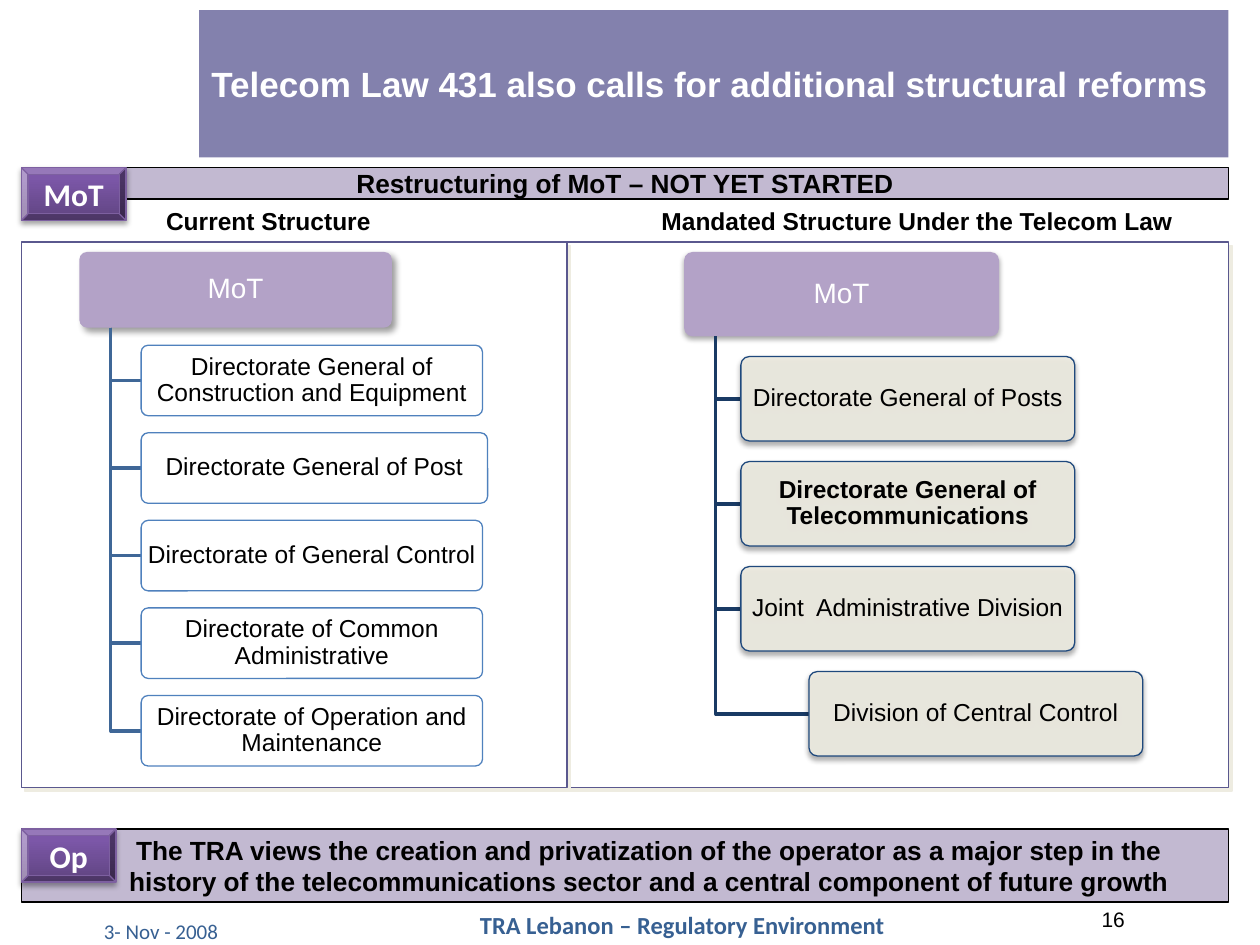
from dataclasses import dataclass
from typing import NamedTuple, Optional

import pptx
import pptx.dml.color
import pptx.enum.shapes
import pptx.enum.text
import pptx.oxml.ns
import pptx.util
from lxml import etree
from pptx.util import Inches

ALIGN = pptx.enum.text.PP_ALIGN
ANCHOR = pptx.enum.text.MSO_ANCHOR
PRESET = pptx.enum.shapes.MSO_SHAPE


class Box(NamedTuple):
    left: float
    top: float
    width: float
    height: float


class Shadow(NamedTuple):
    color: str
    alpha: int
    blur: float
    distance: float
    angle: int


class Margins(NamedTuple):
    left: float = 0.1
    top: float = 0.05
    right: float = 0.1
    bottom: float = 0.05


@dataclass(frozen=True)
class TextStyle:
    size: int
    color: str = "000000"
    bold: bool = False
    font: str = "Arial"
    align: ALIGN = ALIGN.CENTER
    anchor: ANCHOR = ANCHOR.MIDDLE
    margins: Margins = Margins()
    line_spacing: float = 1.0


@dataclass(frozen=True)
class ShapeStyle:
    fill: str
    line: Optional[str] = None
    alpha: int = 100
    shadow: Optional[Shadow] = None
    fill_end: Optional[str] = None
    corner: Optional[float] = None


class Theme:
    soft = Shadow("000000", 35, 3.1, 1.8, 90)
    node_margins = Margins(0.03, 0.02, 0.03, 0.02)

    title_bar = ShapeStyle("8381AD")
    banner = ShapeStyle("C2B9D1", "000000")
    panel = ShapeStyle("FFFFFF", "5A588E", shadow=Shadow("EEECE1", 100, 0, 2.8, 45))
    badge = ShapeStyle("5F4480", "7D60A0", shadow=soft, fill_end="7C57A8")
    current_root = ShapeStyle("B3A2C7", shadow=Shadow("000000", 40, 4, 3, 45), corner=0.1)
    mandated_root = ShapeStyle("B3A2C7", shadow=soft, corner=0.1)
    current_node = ShapeStyle("FFFFFF", "4F81BD", 90, corner=0.1)
    mandated_node = ShapeStyle("EEECE1", "1F497D", 90, soft, corner=0.1)

    title = TextStyle(20, "FFFFFF", True, align=ALIGN.LEFT)
    banner_text = TextStyle(15, bold=True)
    conclusion = TextStyle(15, bold=True, margins=Margins(left=0.48))
    heading = TextStyle(14, bold=True)
    mandated_heading = TextStyle(14, bold=True, align=ALIGN.LEFT, margins=Margins(left=0.75))
    badge_text = TextStyle(18, "FFFFFF", True, "Calibri")
    root_text = TextStyle(16, "FFFFFF", margins=node_margins, line_spacing=0.9)
    node_text = TextStyle(14, margins=node_margins, line_spacing=0.9)
    key_node_text = TextStyle(14, bold=True, margins=node_margins, line_spacing=0.9)
    page_number = TextStyle(12)
    date = TextStyle(12, "376092", font="Calibri", align=ALIGN.RIGHT, anchor=ANCHOR.TOP)
    footer = TextStyle(14, "376092", True, "Calibri", anchor=ANCHOR.TOP)


class Node(NamedTuple):
    label: str
    left: float
    width: float
    style: TextStyle = Theme.node_text


@dataclass(frozen=True)
class Chart:
    """One structure: a root, and nodes spread evenly from first_top to last_top."""
    root: Box
    root_style: ShapeStyle
    node_style: ShapeStyle
    trunk_color: str
    node_height: float
    first_top: float
    last_top: float
    nodes: tuple[Node, ...]


CHARTS = (
    Chart(Box(0.63, 2, 2.48, 0.6), Theme.current_root, Theme.current_node, "3F6797",
          0.56, 2.74, 5.52, (
              Node("Directorate General of Construction and Equipment", 1.12, 2.71),
              Node("Directorate General of Post", 1.12, 2.75),
              Node("Directorate of General Control", 1.12, 2.71),
              Node("Directorate of Common Administrative", 1.12, 2.71),
              Node("Directorate of Operation and Maintenance", 1.12, 2.71))),
    Chart(Box(5.43, 2, 2.5, 0.67), Theme.mandated_root, Theme.mandated_node, "193A64",
          0.67, 2.83, 5.33, (
              Node("Directorate General of Posts", 5.88, 2.65),
              Node("Directorate General of Telecommunications", 5.88, 2.65, Theme.key_node_text),
              Node("Joint  Administrative Division", 5.88, 2.65),
              Node("Division of Central Control", 6.42, 2.65))),
)


def rgb(color: str) -> pptx.dml.color.RGBColor:
    return pptx.dml.color.RGBColor.from_string(color)


def add_child(parent, tag: str, **attributes):
    names = {name: str(value) for name, value in attributes.items()}
    return etree.SubElement(parent, pptx.oxml.ns.qn(tag), names)


def write(shape, style: TextStyle, *lines: str) -> None:
    frame = shape.text_frame
    frame.word_wrap = True
    frame.vertical_anchor = style.anchor
    (frame.margin_left, frame.margin_top,
     frame.margin_right, frame.margin_bottom) = map(Inches, style.margins)
    for index, line in enumerate(lines):
        paragraph = frame.add_paragraph() if index else frame.paragraphs[0]
        paragraph.alignment = style.align
        paragraph.line_spacing = style.line_spacing
        run = paragraph.add_run()
        run.text = line
        run.font.name = style.font
        run.font.size = pptx.util.Pt(style.size)
        run.font.bold = style.bold
        run.font.color.rgb = rgb(style.color)


def add_label(slide, box: Box, style: TextStyle, text: str) -> None:
    write(slide.shapes.add_textbox(*map(Inches, box)), style, text)


def add_block(slide, preset: PRESET, box: Box, style: ShapeStyle):
    shape = slide.shapes.add_shape(preset, *map(Inches, box))
    if style.corner is not None:
        shape.adjustments[0] = style.corner
    if style.fill_end:
        shape.fill.gradient()
        shape.fill.gradient_angle = 90
        start, end = shape.fill.gradient_stops
        start.color.rgb, end.color.rgb = rgb(style.fill), rgb(style.fill_end)
        end.position = 0.8
    else:
        shape.fill.solid()
        shape.fill.fore_color.rgb = rgb(style.fill)
    properties = shape.element.spPr
    if style.alpha < 100:
        fill_color = properties.find(pptx.oxml.ns.qn("a:solidFill"))[0]
        add_child(fill_color, "a:alpha", val=style.alpha * 1000)
    if style.line:
        shape.line.color.rgb = rgb(style.line)
        shape.line.width = pptx.util.Pt(0.75)
    else:
        shape.line.fill.background()
    shape.shadow.inherit = False
    if style.shadow:
        shadow = style.shadow
        outer = add_child(properties.find(pptx.oxml.ns.qn("a:effectLst")), "a:outerShdw",
                          blurRad=pptx.util.Pt(shadow.blur), dist=pptx.util.Pt(shadow.distance),
                          dir=shadow.angle * 60000, algn="tl", rotWithShape=0)
        add_child(add_child(outer, "a:srgbClr", val=shadow.color),
                  "a:alpha", val=shadow.alpha * 1000)
    return shape


def add_branch(slide, x: float, top: float, end_x: float, end_y: float, color: str) -> None:
    """Draw an L-shaped line down from the root and across to a node."""
    builder = slide.shapes.build_freeform(Inches(x), Inches(top))
    builder.add_line_segments([(Inches(x), Inches(end_y)), (Inches(end_x), Inches(end_y))],
                              close=False)
    branch = builder.convert_to_shape()
    branch.fill.background()
    branch.line.color.rgb = rgb(color)
    branch.line.width = pptx.util.Pt(2)
    branch.shadow.inherit = False


def add_structure(slide, chart: Chart) -> None:
    root = chart.root
    write(add_block(slide, PRESET.ROUNDED_RECTANGLE, root, chart.root_style),
          Theme.root_text, "MoT")
    pitch = (chart.last_top - chart.first_top) / (len(chart.nodes) - 1)
    for index, node in enumerate(chart.nodes):
        top = chart.first_top + index * pitch
        add_branch(slide, root.left + root.width / 10, root.top + root.height,
                   node.left, top + chart.node_height / 2, chart.trunk_color)
        box = Box(node.left, top, node.width, chart.node_height)
        write(add_block(slide, PRESET.ROUNDED_RECTANGLE, box, chart.node_style),
              node.style, node.label)


def main() -> None:
    deck = pptx.Presentation()
    deck.slide_width, deck.slide_height = Inches(10), Inches(7.5)
    slide = deck.slides.add_slide(deck.slide_layouts[6])

    add_label(slide, Box(7.67, 7.17, 2.33, 0.25), Theme.page_number, "16")
    write(add_block(slide, PRESET.RECTANGLE, Box(1.58, 0.08, 8.17, 1.17), Theme.title_bar),
          Theme.title, "Telecom Law 431 also calls for additional structural reforms")
    for panel in (Box(4.5, 1.92, 5.25, 4.33), Box(0.17, 1.92, 4.33, 4.33)):
        add_block(slide, PRESET.RECTANGLE, panel, Theme.panel)
    for chart in CHARTS:
        add_structure(slide, chart)
    add_label(slide, Box(0.17, 1.58, 3.92, 0.34), Theme.heading, "Current Structure")
    add_label(slide, Box(4.5, 1.58, 5, 0.34), Theme.mandated_heading,
              "Mandated Structure Under the Telecom Law")

    write(add_block(slide, PRESET.RECTANGLE, Box(0.17, 1.33, 9.58, 0.25), Theme.banner),
          Theme.banner_text, "Restructuring of MoT – NOT YET STARTED")
    write(add_block(slide, PRESET.RECTANGLE, Box(0.17, 6.58, 9.58, 0.58), Theme.banner),
          Theme.conclusion,
          "The TRA views the creation and privatization of the operator as a major step in the",
          "history of the telecommunications sector and a central component of future growth")
    for badge, box in (("MoT", Box(0.17, 1.33, 0.83, 0.42)), ("Op", Box(0.17, 6.58, 0.75, 0.42))):
        write(add_block(slide, PRESET.BEVEL, box, Theme.badge), Theme.badge_text, badge)

    add_label(slide, Box(0.25, 7.24, 1.58, 0.26), Theme.date, "3- Nov - 2008")
    add_label(slide, Box(3, 7.17, 4.83, 0.33), Theme.footer, "TRA Lebanon – Regulatory Environment")
    deck.save("out.pptx")


if __name__ == "__main__":
    main()
